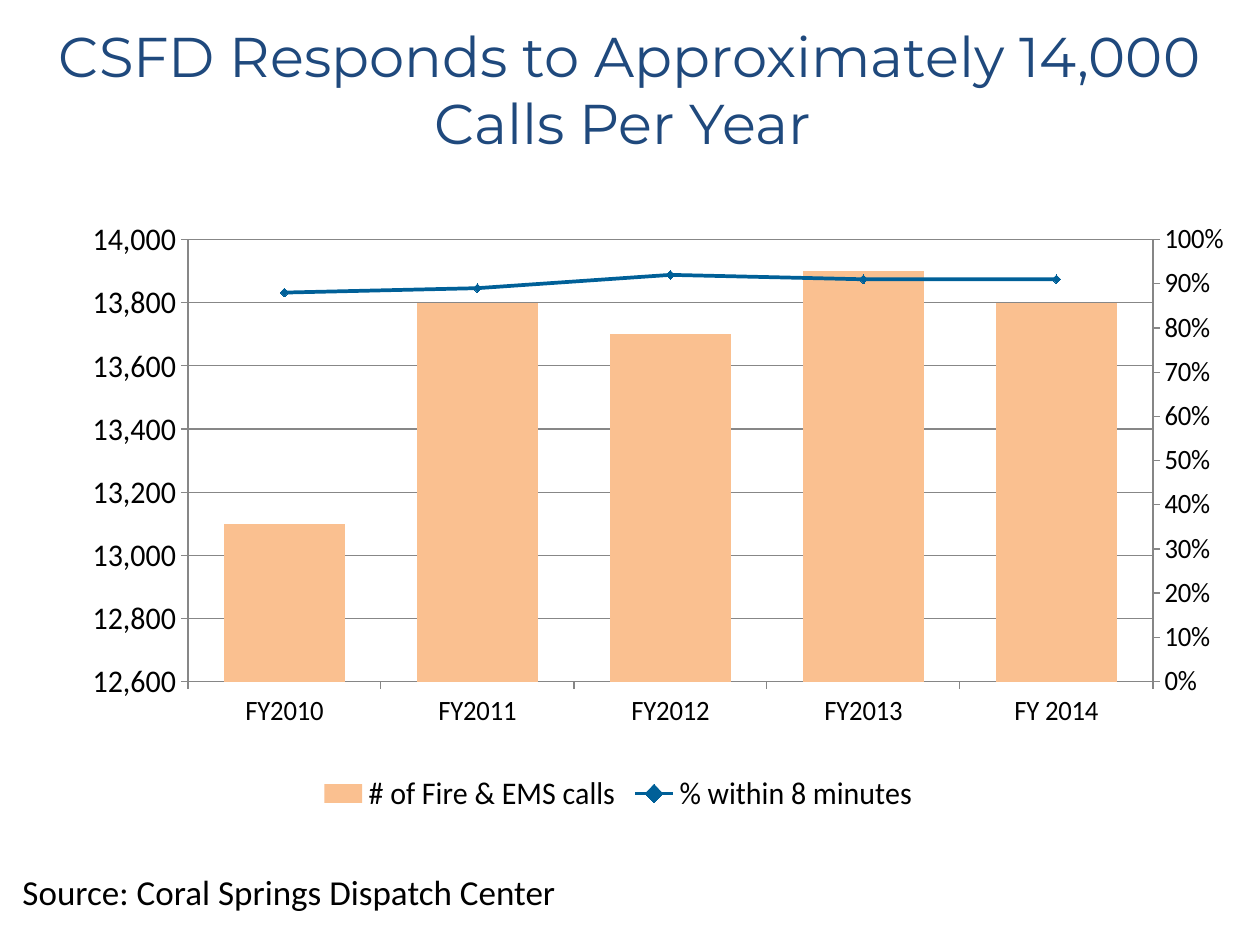
from copy import deepcopy

from lxml.etree import SubElement
from pptx import Presentation
from pptx.chart.axis import ValueAxis
from pptx.chart.data import CategoryChartData
from pptx.dml.color import RGBColor
from pptx.enum.chart import XL_CHART_TYPE as ChartType
from pptx.enum.chart import XL_LEGEND_POSITION as LegendPosition
from pptx.enum.chart import XL_MARKER_STYLE as MarkerStyle
from pptx.enum.chart import XL_TICK_MARK as TickMark
from pptx.enum.text import MSO_ANCHOR as Anchor
from pptx.enum.text import PP_ALIGN as Align
from pptx.oxml import parse_xml
from pptx.oxml.ns import nsdecls, qn
from pptx.util import Inches, Pt

NAVY = RGBColor(0x1F, 0x49, 0x7D)
PEACH = RGBColor(0xFA, 0xC0, 0x90)
BLUE = RGBColor(0x00, 0x60, 0x98)
GRAY = RGBColor(0x86, 0x86, 0x86)
BLACK = RGBColor(0, 0, 0)

YEARS = ["FY2010", "FY2011", "FY2012", "FY2013", "FY 2014"]
CALLS = [13100, 13800, 13700, 13900, 13800]
ON_TIME = [0.88, 0.89, 0.92, 0.91, 0.91]
PLOT_AREA = {"x": 0.108, "y": 0.038, "w": 0.879, "h": 0.734}
RIGHT_AXIS_IDS = {"c:catAx": "50010", "c:valAx": "50020"}


def style_font(font, size, color=BLACK, name="Calibri"):
    """Set the face, size and colour of a font."""
    font.name, font.size, font.color.rgb = name, Pt(size), color


def write_text(shape, text, size, color=BLACK, name="Calibri",
               align=Align.LEFT, anchor=Anchor.TOP):
    """Write one formatted paragraph into a shape."""
    frame = shape.text_frame
    frame.word_wrap = True
    frame.vertical_anchor = anchor
    paragraph = frame.paragraphs[0]
    paragraph.alignment = align
    run = paragraph.add_run()
    run.text = text
    style_font(run.font, size, color, name)


def add_title(slide, text):
    """Place and fill the title placeholder."""
    title = slide.shapes.title
    title.left, title.top = Inches(0.13), Inches(0.08)
    title.width, title.height = Inches(9.74), Inches(1.25)
    frame = title.text_frame
    frame.margin_left = frame.margin_right = Inches(0.08)
    frame.margin_top = frame.margin_bottom = Inches(0.04)
    write_text(title, text, 32, color=NAVY, name="Montserrat",
               align=Align.CENTER, anchor=Anchor.MIDDLE)


def format_axis(axis, **scale):
    """Give an axis its line, ticks, labels and optional scale."""
    axis.major_tick_mark = TickMark.OUTSIDE
    axis.minor_tick_mark = TickMark.NONE
    axis.format.line.color.rgb = GRAY
    axis.format.line.width = Pt(0.75)
    style_font(axis.tick_labels.font, 16)
    for setting, value in scale.items():
        setattr(axis, setting, value)


def format_value_axis(axis, number_format, **scale):
    """Format a value axis and its number labels."""
    format_axis(axis, **scale)
    axis.tick_labels.number_format = number_format
    axis.tick_labels.number_format_is_linked = False


def set_child(parent, tag, value):
    """Set the value of a child element wherever it is present."""
    for child in parent.findall(qn(tag)):
        child.set("val", value)


def move_to_right_axis(chart):
    """Turn the last series into a line on a right-hand axis and return that axis."""
    plot_area = chart.plots[0]._element.getparent()
    bars = plot_area.find(qn("c:barChart"))
    rate = bars.findall(qn("c:ser"))[-1]
    for bar_setting in rate.findall(qn("c:invertIfNegative")):
        rate.remove(bar_setting)
    lines = parse_xml(f'<c:lineChart {nsdecls("c")}><c:grouping val="standard"/>'
                      '<c:varyColors val="0"/></c:lineChart>')
    lines.append(rate)
    SubElement(lines, qn("c:marker")).set("val", "1")
    bars.addnext(lines)

    last_axis = plot_area.find(qn("c:valAx"))
    copies = {tag: deepcopy(plot_area.find(qn(tag))) for tag in RIGHT_AXIS_IDS}
    for (tag, axis), crossing in zip(copies.items(), reversed(list(RIGHT_AXIS_IDS.values()))):
        SubElement(lines, qn("c:axId")).set("val", RIGHT_AXIS_IDS[tag])
        set_child(axis, "c:axId", RIGHT_AXIS_IDS[tag])
        set_child(axis, "c:crossAx", crossing)
        last_axis.addnext(axis)
        last_axis = axis
    set_child(copies["c:catAx"], "c:delete", "1")
    set_child(copies["c:valAx"], "c:axPos", "r")
    set_child(copies["c:valAx"], "c:crosses", "max")
    return ValueAxis(copies["c:valAx"])


def set_plot_area(chart):
    """Fix the inner plot area as shares of the chart's size."""
    plot_area = chart.plots[0]._element.getparent()
    for old in plot_area.findall(qn("c:layout")):
        plot_area.remove(old)
    layout = parse_xml(f'<c:layout {nsdecls("c")}><c:manualLayout>'
                       '<c:layoutTarget val="inner"/><c:xMode val="edge"/>'
                       '<c:yMode val="edge"/></c:manualLayout></c:layout>')
    for side, share in PLOT_AREA.items():
        SubElement(layout[0], qn(f"c:{side}")).set("val", str(share))
    plot_area.insert(0, layout)


def add_calls_chart(slide):
    """Add the chart of yearly calls and the share answered in time."""
    data = CategoryChartData()
    data.categories = YEARS
    data.add_series("# of Fire & EMS calls", CALLS, "#,##0")
    data.add_series("% within 8 minutes", ON_TIME, "0%")
    chart = slide.shapes.add_chart(
        ChartType.COLUMN_CLUSTERED, Inches(0.55), Inches(1.72),
        Inches(9.16), Inches(4.78), data).chart
    chart.has_title = False
    style_font(chart.font, 18)
    rate_axis = move_to_right_axis(chart)
    set_plot_area(chart)

    format_axis(chart.category_axis)
    format_value_axis(chart.value_axis, "#,##0", minimum_scale=10000,
                      maximum_scale=14500, major_unit=500)
    chart.value_axis.major_gridlines.format.line.color.rgb = GRAY
    format_value_axis(rate_axis, "0%", minimum_scale=0, maximum_scale=1,
                      major_unit=0.1, has_major_gridlines=False)

    bars, lines = chart.plots
    bars.gap_width = 60
    bars.vary_by_categories = False
    calls, rate = bars.series[0], lines.series[0]
    calls.format.fill.solid()
    calls.format.fill.fore_color.rgb = PEACH
    rate.smooth = False
    rate.format.line.color.rgb = BLUE
    rate.format.line.width = Pt(2.25)
    rate.marker.style = MarkerStyle.DIAMOND
    rate.marker.size = 5
    rate.marker.format.fill.solid()
    rate.marker.format.fill.fore_color.rgb = BLUE
    rate.marker.format.line.color.rgb = BLUE

    chart.has_legend = True
    chart.legend.position = LegendPosition.BOTTOM
    chart.legend.include_in_layout = False
    style_font(chart.legend.font, 18)


def main():
    """Build the slide and save it."""
    deck = Presentation()
    deck.slide_width, deck.slide_height = Inches(10), Inches(7.5)
    slide = deck.slides.add_slide(deck.slide_layouts[5])
    add_title(slide, "CSFD Responds to Approximately 14,000 Calls Per Year ")
    add_calls_chart(slide)
    source = slide.shapes.add_textbox(Inches(0.08), Inches(6.86),
                                      Inches(4.58), Inches(0.56))
    write_text(source, "Source: Coral Springs Dispatch Center", 20)
    deck.save("out.pptx")


if __name__ == "__main__":
    main()
